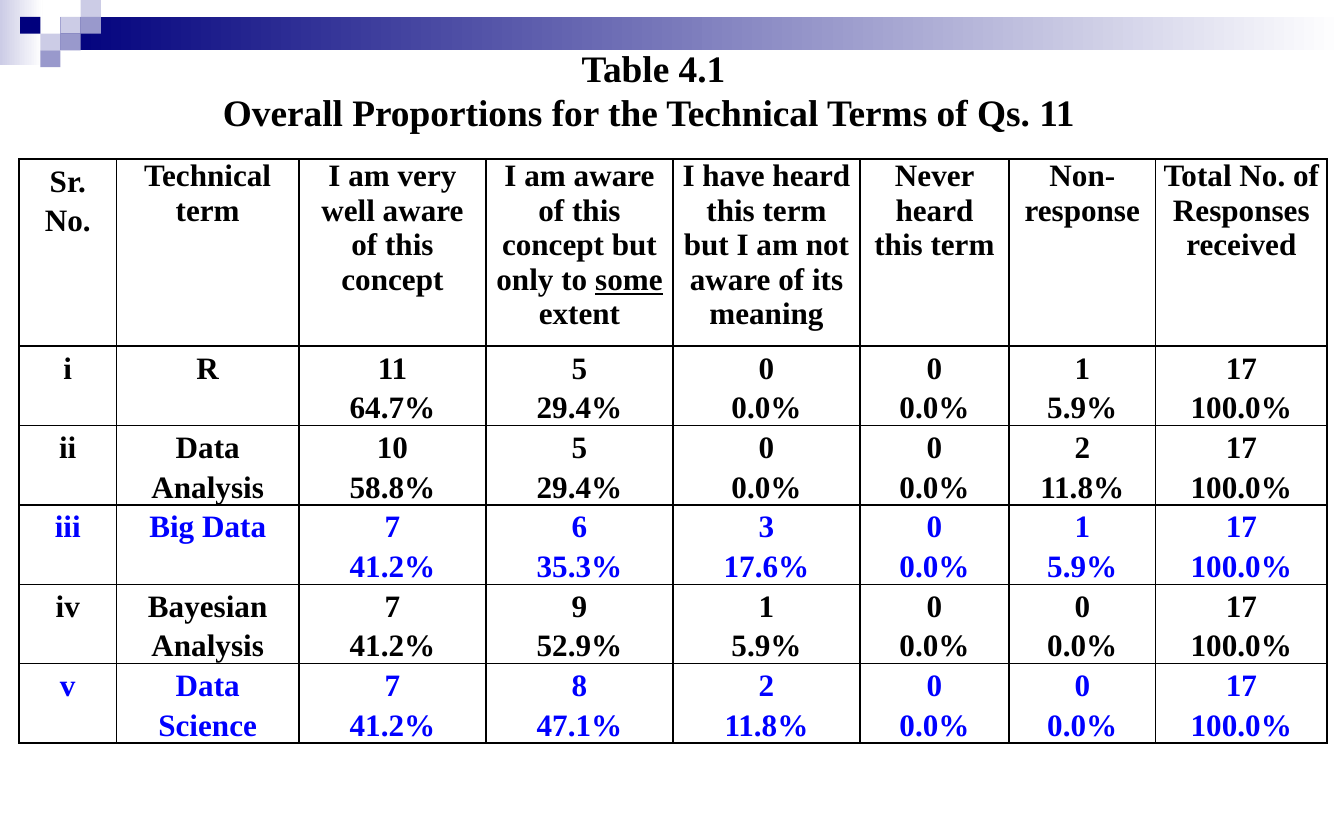
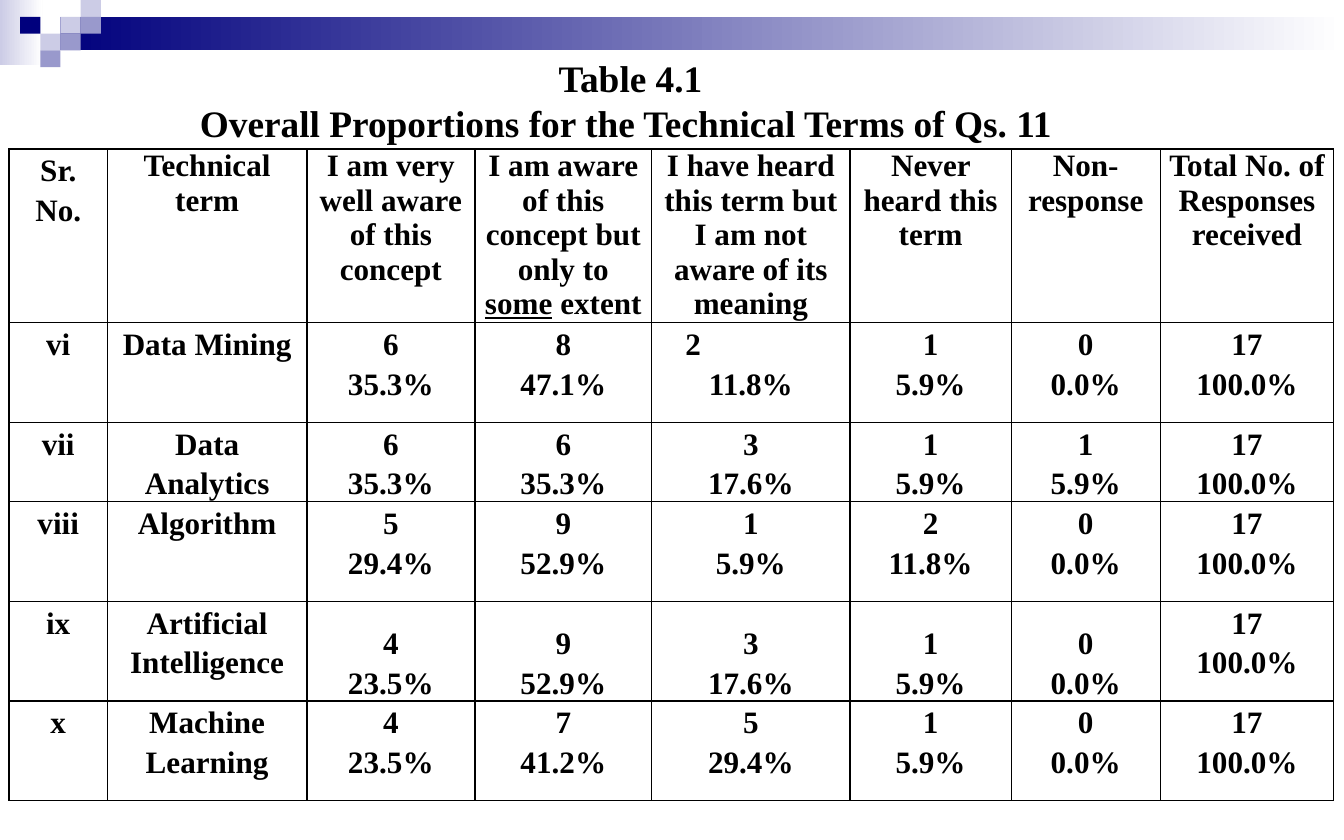
"""Build two slides that tabulate awareness of technical terms."""
from lxml.etree import SubElement
from pptx import Presentation
from pptx.dml.color import RGBColor
from pptx.enum.shapes import MSO_SHAPE
from pptx.enum.text import MSO_ANCHOR, MSO_AUTO_SIZE, PP_ALIGN
from pptx.oxml.ns import qn
from pptx.util import Inches, Pt

NAVY = RGBColor(0x00, 0x00, 0x7D)
MID = RGBColor(0x99, 0x99, 0xCC)
PALE = RGBColor(0xCC, 0xCC, 0xE6)
WHITE = RGBColor(0xFF, 0xFF, 0xFF)
BLACK = RGBColor(0x00, 0x00, 0x00)
BLUE = RGBColor(0x00, 0x00, 0xFF)
FONT = "Times New Roman"
WIDE, HIGH = 12, 7.5
COL, ROW = 0.18, 0.15
TOTAL = 17

TITLE = ["Table 4.1", "Overall Proportions for the Technical Terms of Qs. 11 "]
HEADS = [
    "Sr. No.",
    "Technical term",
    "I am very well aware of this concept",
    "I am aware of this concept but only to |some| extent",
    "I have heard this term but I am not aware of its meaning",
    "Never heard this term",
    "Non-response",
    "Total No. of Responses received",
]
FADES = [
    ((0, 0, 0.38, 0.58), PALE),
    ((3 * COL, ROW, WIDE - 3 * COL, 2 * ROW), NAVY),
]
TILES = [
    (3, 1, PALE), (4, 0, PALE), (4, 1, MID), (2, 2, PALE),
    (1, 1, NAVY), (3, 2, MID), (2, 3, MID),
]
SLIDES = [
    {
        "title": (1.5, 0.33, 8.67, 1.33),
        "spot": (0.17, 1.42),
        "cols": [0.87, 1.63, 1.67, 1.67, 1.67, 1.33, 1.31, 1.53],
        "rows": [1.67] + [0.68] * 5,
        "data": [
            ("i", "R", [11, 5, 0, 0, 1]),
            ("ii", "Data Analysis", [10, 5, 0, 0, 2]),
            ("iii", "Big Data", [7, 6, 3, 0, 1]),
            ("iv", "Bayesian Analysis", [7, 9, 1, 0, 0]),
            ("v", "Data Science", [7, 8, 2, 0, 0]),
        ],
    },
    {
        "title": (1.67, 0.42, 7.92, 1.33),
        "spot": (0.08, 1.33),
        "cols": [0.88, 1.78, 1.5, 1.58, 1.77, 1.44, 1.33, 1.55],
        "rows": [1.55, 0.89, 0.63, 0.89, 0.89, 0.89],
        "data": [
            ("vi", "Data Mining", [6, 8, 2, 1, 0]),
            ("vii", "Data Analytics", [6, 6, 3, 1, 1]),
            ("viii", "Algorithm", [5, 9, 1, 2, 0]),
            ("ix", "Artificial Intelligence", [4, 9, 3, 1, 0]),
            ("x", "Machine Learning", [4, 7, 5, 1, 0]),
        ],
    },
]
LOW = {"ii", "iii", "vii", "ix"}
VIVID = {"iii", "v"}
SHIFTED = ("vi", 4)


def apply(item, form):
    for name, value in form.items():
        setattr(item, name, value)


def write(frame, lines, size, color, space=1.0):
    for n, line in enumerate(lines):
        para = frame.paragraphs[0] if n == 0 else frame.add_paragraph()
        apply(para, {"alignment": PP_ALIGN.CENTER, "line_spacing": space})
        for k, part in enumerate(line.split("|")):
            run = para.add_run()
            run.text = part
            apply(run.font, {"name": FONT, "size": Pt(size), "bold": True})
            run.font.color.rgb = color
            if k % 2:
                run.font.underline = True


def add_box(shapes, place):
    box = shapes.add_shape(MSO_SHAPE.RECTANGLE, *map(Inches, place))
    box.shadow.inherit = False
    box.line.fill.background()
    return box


def add_band(slide):
    boxes = []
    for place, color in FADES:
        box = add_box(slide.shapes, place)
        box.fill.gradient()
        box.fill.gradient_angle = 0
        for stop, tint, spot in zip(box.fill.gradient_stops, (color, WHITE), (0, 1)):
            stop.color.rgb = tint
            stop.position = spot
        boxes.append(box)
    for col, row, color in TILES:
        box = add_box(slide.shapes, (col * COL, row * ROW, COL, ROW))
        box.fill.solid()
        box.fill.fore_color.rgb = color
        boxes.append(box)
    tree = slide.slide_layout.shapes.element
    for n, box in enumerate(boxes):
        box.element.nvSpPr.cNvPr.id = 20 + n
        tree.append(box.element)


def add_title(slide, place):
    title = slide.shapes.title
    left, top, width, height = map(Inches, place)
    apply(title, {"left": left, "top": top, "width": width, "height": height})
    apply(title.text_frame, {
        "word_wrap": True, "auto_size": MSO_AUTO_SIZE.NONE,
        "vertical_anchor": MSO_ANCHOR.TOP,
        "margin_left": Inches(0.11), "margin_right": Inches(0.11),
        "margin_top": Inches(0.07), "margin_bottom": Inches(0.06),
    })
    write(title.text_frame, TITLE, 24, BLACK)


def style(cell, anchor):
    apply(cell, {
        "margin_left": Inches(0.07), "margin_right": Inches(0.07),
        "margin_top": 0, "margin_bottom": 0, "vertical_anchor": anchor,
    })
    cell.fill.background()
    props = cell._tc.get_or_add_tcPr()
    for n, side in enumerate(("lnL", "lnR", "lnT", "lnB")):
        line = SubElement(props, qn("a:" + side), w=str(Pt(1)))
        fill = SubElement(line, qn("a:solidFill"))
        SubElement(fill, qn("a:srgbClr"), val=str(BLACK))
        props.insert(n, line)


def add_grid(slide, page):
    cols, rows = page["cols"], page["rows"]
    place = (*page["spot"], sum(cols), sum(rows))
    grid = slide.shapes.add_table(len(rows), len(cols), *map(Inches, place)).table
    apply(grid, {"first_row": False, "horz_banding": False})
    for col, width in zip(grid.columns, cols):
        col.width = Inches(width)
    for row, height in zip(grid.rows, rows):
        row.height = Inches(height)
    for c, head in enumerate(HEADS):
        cell = grid.cell(0, c)
        style(cell, MSO_ANCHOR.TOP)
        write(cell.text_frame, [head], 20, BLACK, 1.0 if c else 1.15)
    for r, (mark, term, counts) in enumerate(page["data"], 1):
        pairs = [[str(n), f"{n / TOTAL:.1%}"] for n in counts + [TOTAL]]
        color = BLUE if mark in VIVID else BLACK
        for c, lines in enumerate([[mark], [term]] + pairs):
            cell = grid.cell(r, c)
            low = mark in LOW and 2 <= c <= 6
            style(cell, MSO_ANCHOR.BOTTOM if low else MSO_ANCHOR.TOP)
            write(cell.text_frame, lines, 20, color, 1.15)
            if (mark, c) == SHIFTED:
                para = cell.text_frame.paragraphs[0]
                para.alignment = PP_ALIGN.LEFT
                para._p.get_or_add_pPr().set("marL", str(Inches(0.23)))


def main():
    deck = Presentation()
    apply(deck, {"slide_width": Inches(WIDE), "slide_height": Inches(HIGH)})
    for n, page in enumerate(SLIDES):
        slide = deck.slides.add_slide(deck.slide_layouts[5])
        if n == 0:
            add_band(slide)
        add_title(slide, page["title"])
        add_grid(slide, page)
    deck.save("out.pptx")


if __name__ == "__main__":
    main()
